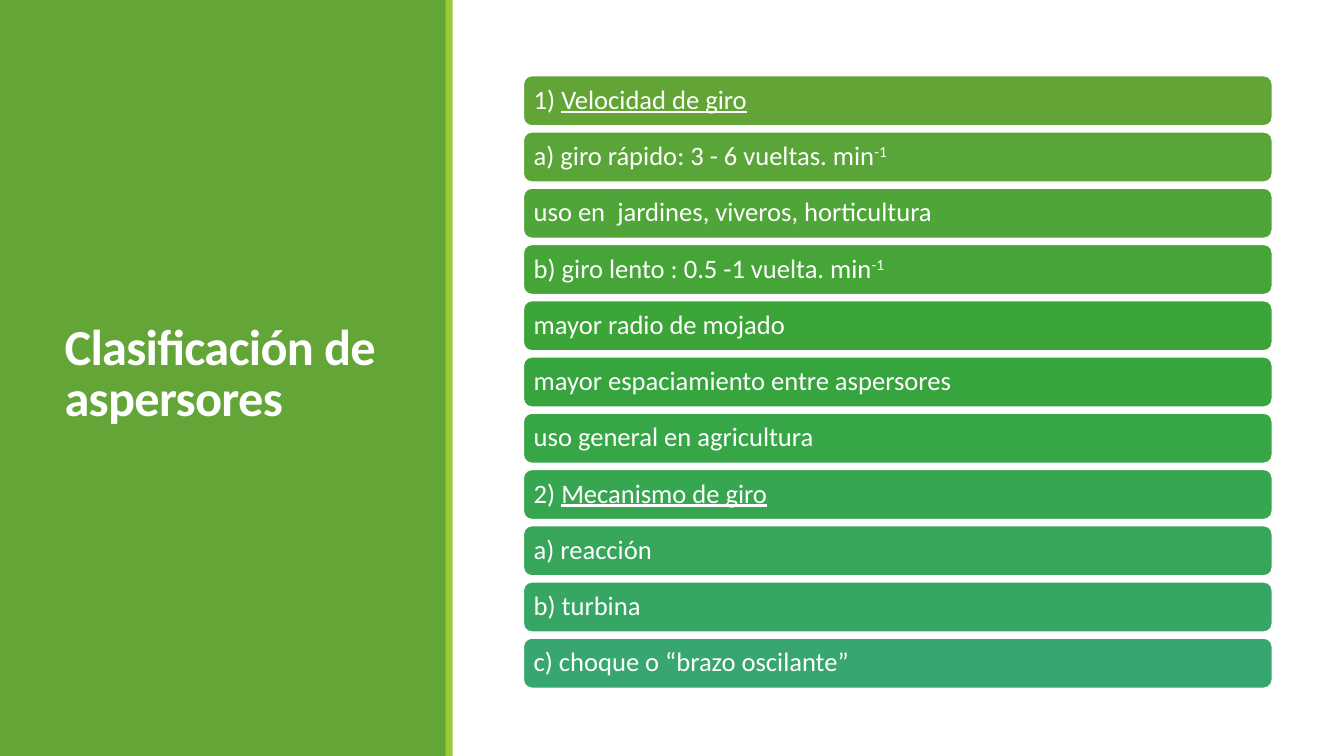
from colorsys import hls_to_rgb

from pptx import Presentation
from pptx.dml.color import RGBColor
from pptx.enum import shapes, text
from pptx.util import Inches, Pt

TITLE = "Clasificación de aspersores"
ROWS = [
    [("1) ", ""), ("Velocidad de giro", "under")],
    [("a) giro rápido: 3 - 6 vueltas. min", ""), ("-1", "sup")],
    [("uso en", ""), (" ", "wide"), ("jardines, viveros, horticultura", "")],
    [("b) giro lento : 0.5 -1 vuelta. min", ""), ("-1", "sup")],
    [("mayor radio de mojado", "")],
    [("mayor espaciamiento entre aspersores", "")],
    [("uso general en agricultura", "")],
    [("2) ", ""), ("Mecanismo de giro", "under")],
    [("a) reacción", "")],
    [("b) turbina", "")],
    [("c) choque o “brazo oscilante”", "")],
]

THEME = {
    "font": "Calibri",
    "white": RGBColor.from_string("FFFFFF"),
    "green": RGBColor.from_string("63A537"),
    "lime": RGBColor.from_string("99CB38"),
    "title": Pt(36),
    "row": Pt(19),
    "edge": Pt(1.25),
}
MARKS = {
    "": {},
    "under": {"u": "sng"},
    "sup": {"baseline": "30000"},
    "wide": {"spc": "430"},
}
LEFT, TOP, WIDTH, HEIGHT, PITCH = 5.19, 0.75, 7.43, 0.5, 0.558


def put(obj, **vals):
    for name, val in vals.items():
        setattr(obj, name, val)


def block(slide, kind, box, fill):
    shape = slide.shapes.add_shape(kind, *map(Inches, box))
    shape.shadow.inherit = False
    shape.fill.solid()
    shape.fill.fore_color.rgb = fill
    shape.line.fill.background()
    return shape


def write(frame, runs, size, bold, space, inset):
    margins = ("margin_left", "margin_right", "margin_top", "margin_bottom")
    put(frame, word_wrap=True, auto_size=text.MSO_AUTO_SIZE.NONE,
        vertical_anchor=text.MSO_ANCHOR.MIDDLE,
        **dict.fromkeys(margins, Inches(inset)))
    para = frame.paragraphs[0]
    put(para, alignment=text.PP_ALIGN.LEFT, line_spacing=space)
    for words, mark in runs:
        run = para.add_run()
        run.text = words
        put(run.font, name=THEME["font"], size=size, bold=bold)
        run.font.color.rgb = THEME["white"]
        for name, val in MARKS[mark].items():
            run.font._element.set(name, val)


def shade(step):
    rgb = hls_to_rgb((96 + 5.4 * step) / 360, 0.43 + 0.0005 * step, 0.5)
    return RGBColor(*(round(255 * part) for part in rgb))


def main():
    deck = Presentation()
    put(deck, slide_width=Inches(13.33), slide_height=Inches(7.5))
    slide = deck.slides.add_slide(deck.slide_layouts[5])
    rect = shapes.MSO_SHAPE.RECTANGLE
    block(slide, rect, (0, 0, 4.43, 7.5), THEME["green"])
    block(slide, rect, (4.42, 0, 0.07, 7.5), THEME["lime"])

    title = slide.shapes.title
    put(title, left=Inches(0.54), top=Inches(0.57),
        width=Inches(3.37), height=Inches(6.31))
    write(title.text_frame, [(TITLE, "")], THEME["title"], True, 0.85, 0.1)
    title.text_frame.paragraphs[0].runs[0].font._element.set("spc", "-50")
    title.element.getparent().append(title.element)

    for step, runs in enumerate(ROWS):
        box = (LEFT, TOP + PITCH * step, WIDTH, HEIGHT)
        bar = block(slide, shapes.MSO_SHAPE.ROUNDED_RECTANGLE, box, shade(step))
        bar.line.color.rgb = THEME["white"]
        bar.line.width = THEME["edge"]
        write(bar.text_frame, runs, THEME["row"], False, 0.9, 0.08)

    deck.save("out.pptx")


if __name__ == "__main__":
    main()
